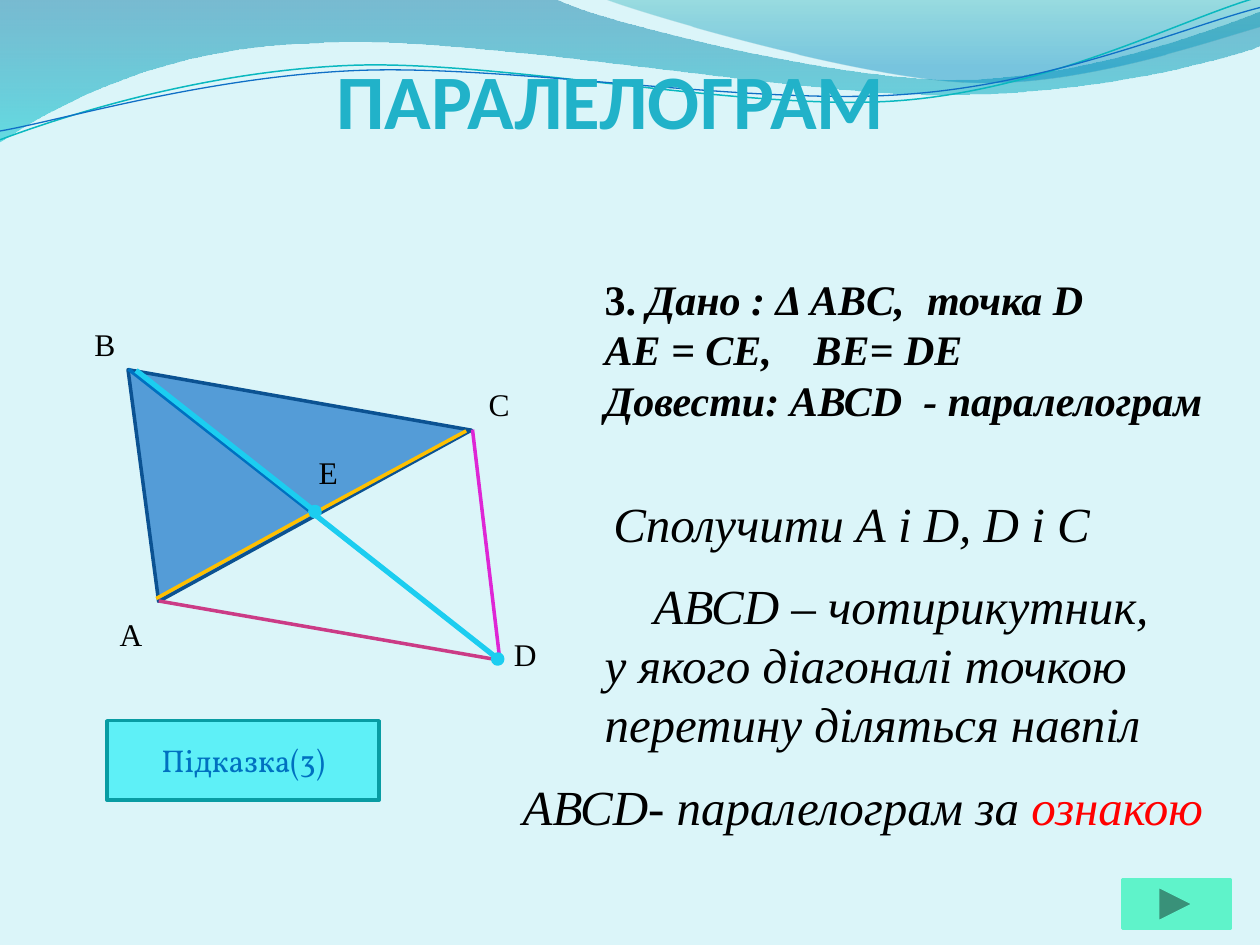
from lxml.etree import SubElement
from pptx import Presentation
from pptx.dml.color import RGBColor
from pptx.enum.shapes import MSO_CONNECTOR, MSO_SHAPE
from pptx.enum.text import MSO_ANCHOR, PP_ALIGN
from pptx.oxml.ns import qn
from pptx.util import Inches, Pt

COLORS = {
    "background": "DBF5F9", "title": "21B2C9", "text": "000000", "accent": "FF0000",
    "triangle": "0F6FC6", "edge": "0B5292", "diagonal": "0070C0", "half_ac": "FFC000",
    "half_bd": "1CCDF0", "side_cd": "DE26D5", "side_ad": "CB3B86",
    "hint": "5EF0F7", "hint_edge": "089CA3", "next": "5FF3CA",
    "wave_teal": "0AB8BF", "wave_blue": "0F6FC6",
    "wide_top": "0074A1", "wide_bottom": "00C6CF",
    "right_top": "00A1A9", "right_bottom": "008BBF",
}
SERIF = "Times New Roman"

# Waves in hundredths of an inch: start, then straight (2 numbers) or Bezier (6) pieces
FILLED_WAVES = [
    ([(0, 0), (440, -1), (476, 17, 664, 63, 758, 63), (853, 63, 958, 26, 1000, 9),
      (1001, 36), (983, 44, 870, 76, 746, 75), (622, 75, 382, 28, 257, 34),
      (129, 36, 46, 83, -1, 113)],
     [(0, "wide_top", 45), (1, "wide_bottom", 55)]),
    ([(479, -1), (509, 11, 682, 62, 769, 65), (856, 69, 961, 32, 1000, 21), (1000, 0)],
     [(0, "right_top", 30), (0.8, "right_bottom", 45)]),
]
LINE_WAVES = [
    ([(0, 111), (48, 93, 158, 57, 277, 52), (395, 47, 593, 89, 713, 80),
      (833, 71, 938, 15, 998, -2)], "wave_teal", 0.85),
    ([(0, 104), (47, 96, 164, 61, 283, 56), (403, 51, 597, 84, 717, 75),
      (836, 67, 941, 21, 1000, 6)], "wave_blue", 0.75),
]
# Segments of the drawing: from, to, colour, width
SEGMENTS = [
    ((1.02, 2.93), (3.98, 5.25), "diagonal", 2),
    ((1.24, 4.75), (2.46, 4.08), "half_ac", 2),
    ((2.48, 4.08), (3.7, 3.42), "half_ac", 2),
    ((1.08, 2.94), (2.54, 4.09), "half_bd", 3),
    ((2.48, 4.07), (3.94, 5.22), "half_bd", 3),
    ((3.75, 3.41), (3.97, 5.26), "side_cd", 2),
    ((1.26, 4.77), (3.91, 5.23), "side_ad", 2),
]
POINTS = [(3.91, 5.19), (2.46, 4.02)]
LABELS = {"A": (0.85, 4.83), "B": (0.65, 2.53), "C": (3.78, 3.01),
          "D": (3.98, 4.99), "E": (2.43, 3.55)}
# Lines of the problem: runs (text, italic) and the tab stop
GIVEN = [
    ([("3. ", False), ("Дано : Δ ABC,\tточка D", True)], 2.56),
    ([("AE = CE,\tBE= DE", True)], 1.66),
    ([("Довести: АВСD\t- паралелограм", True)], 2.53),
]
PROOF = [
    ((4.38, 3.87, 4.76, 0.57), [("Сполучити А і D, D і С", "text")]),
    ((4.7, 4.52, 4.76, 1.51),
     [("АВСD – чотирикутник, у якого діагоналі точкою перетину діляться навпіл", "text")]),
    ((3.66, 6.11, 6.18, 0.57), [("АВСD- паралелограм за ", "text"), ("ознакою", "accent")]),
]
PROOF_INDENT = 0.39


def rgb(name):
    return RGBColor.from_string(COLORS[name])


def set_alpha(color_element, percent):
    SubElement(color_element, qn("a:alpha")).set("val", str(percent * 1000))


def style_run(span, size, color="text", font=SERIF, bold=False, italic=False):
    span.font.name, span.font.size = font, Pt(size)
    span.font.bold, span.font.italic = bold, italic
    span.font.color.rgb = rgb(color)


def add_run(para, text, *style, **options):
    span = para.add_run()
    span.text = text
    style_run(span, *style, **options)


def add_box(page, place):
    box = page.shapes.add_textbox(*map(Inches, place))
    box.text_frame.word_wrap = True
    return box.text_frame


def add_figure(page, kind, place, fill, edge):
    figure = page.shapes.add_shape(kind, *map(Inches, place))
    figure.shadow.inherit = False
    figure.fill.solid()
    figure.fill.fore_color.rgb = rgb(fill)
    figure.line.color.rgb = rgb(edge)
    figure.line.width = Pt(2)
    return figure


def add_wave(page, pieces, close):
    ends = [piece[-2:] for piece in pieces]
    left, top = (min(values) for values in zip(*ends))
    builder = page.shapes.build_freeform(*ends[0], scale=Inches(0.01))
    builder.add_line_segments(ends[1:], close=close)
    wave = builder.convert_to_shape()
    wave.shadow.inherit = False
    # Turn the straight pieces with control points into Bezier curves
    lines = list(wave._element.iter(qn("a:lnTo")))
    for line, piece in zip(lines, pieces[1:]):
        if len(piece) == 6:
            curve = SubElement(line.getparent(), qn("a:cubicBezTo"))
            for x, y in zip(piece[::2], piece[1::2]):
                knot = SubElement(curve, qn("a:pt"))
                knot.set("x", str(x - left))
                knot.set("y", str(y - top))
            line.getparent().replace(line, curve)
    return wave


def main():
    deck = Presentation()
    deck.slide_width, deck.slide_height = Inches(10), Inches(7.5)
    page = deck.slides.add_slide(deck.slide_layouts[5])
    page.background.fill.solid()
    page.background.fill.fore_color.rgb = rgb("background")

    # Waves along the top
    for pieces, stops in FILLED_WAVES:
        wave = add_wave(page, pieces, True)
        wave.line.fill.background()
        wave.fill.gradient()
        wave.fill.gradient_angle = 270
        for stop, (position, color, _) in zip(wave.fill.gradient_stops, stops):
            stop.position = position
            stop.color.rgb = rgb(color)
        for element, (_, _, opacity) in zip(wave._element.iter(qn("a:srgbClr")), stops):
            set_alpha(element, opacity)
    for pieces, color, width in LINE_WAVES:
        wave = add_wave(page, pieces, False)
        wave.fill.background()
        wave.line.color.rgb = rgb(color)
        wave.line.width = Pt(width)

    # Title, in front of the waves
    title = page.shapes.title
    title._element.getparent().append(title._element)
    title.left, title.top, title.width, title.height = map(Inches, (2.55, 0.36, 4.59, 0.84))
    title.text_frame.text = "ПАРАЛЕЛОГРАМ"
    title.text_frame.word_wrap = False
    title.text_frame.vertical_anchor = MSO_ANCHOR.BOTTOM
    para = title.text_frame.paragraphs[0]
    para.alignment = PP_ALIGN.CENTER
    style_run(para.runs[0], 44, "title", "Calibri", bold=True)

    # Triangle, segments and points
    triangle = add_figure(page, MSO_SHAPE.ISOSCELES_TRIANGLE, (0.67, 2.47, 2.83, 1.73),
                          "triangle", "edge")
    triangle.adjustments[0] = 0.237
    triangle.rotation = 331.3
    set_alpha(next(triangle._element.iter(qn("a:srgbClr"))), 66)
    for start, end, color, width in SEGMENTS:
        segment = page.shapes.add_connector(MSO_CONNECTOR.STRAIGHT, *map(Inches, start + end))
        segment.line.color.rgb = rgb(color)
        segment.line.width = Pt(width)
        SubElement(segment._element.spPr, qn("a:effectLst"))
    for point in POINTS:
        add_figure(page, MSO_SHAPE.OVAL, point + (0.08, 0.08), "half_bd", "half_bd")
    for letter, corner in LABELS.items():
        add_run(add_box(page, corner + (0.39, 0.4)).paragraphs[0], letter, 18)

    # Given and to prove
    frame = add_box(page, (4.7, 2.12, 5.08, 1.31))
    for number, (runs, stop) in enumerate(GIVEN):
        para = frame.add_paragraph() if number else frame.paragraphs[0]
        tabs = SubElement(para._p.get_or_add_pPr(), qn("a:tabLst"))
        tab = SubElement(tabs, qn("a:tab"))
        tab.set("pos", str(Inches(stop)))
        tab.set("algn", "l")
        for text, italic in runs:
            add_run(para, text, 24, bold=True, italic=italic)

    # Proof
    for place, runs in PROOF:
        para = add_box(page, place).paragraphs[0]
        para._p.get_or_add_pPr().set("indent", str(Inches(PROOF_INDENT)))
        for text, color in runs:
            add_run(para, text, 28, color, italic=True)

    # Buttons
    hint = add_figure(page, MSO_SHAPE.ACTION_BUTTON_CUSTOM, (0.85, 5.72, 2.16, 0.63),
                      "hint", "hint_edge")
    hint.text_frame.vertical_anchor = MSO_ANCHOR.MIDDLE
    para = hint.text_frame.paragraphs[0]
    para.alignment = PP_ALIGN.CENTER
    add_run(para, "Підказка(3)", 18, "diagonal", "Vollkorn")
    add_figure(page, MSO_SHAPE.ACTION_BUTTON_FORWARD_OR_NEXT, (8.91, 6.98, 0.85, 0.39),
               "next", "next")
    deck.save("out.pptx")


if __name__ == "__main__":
    main()
